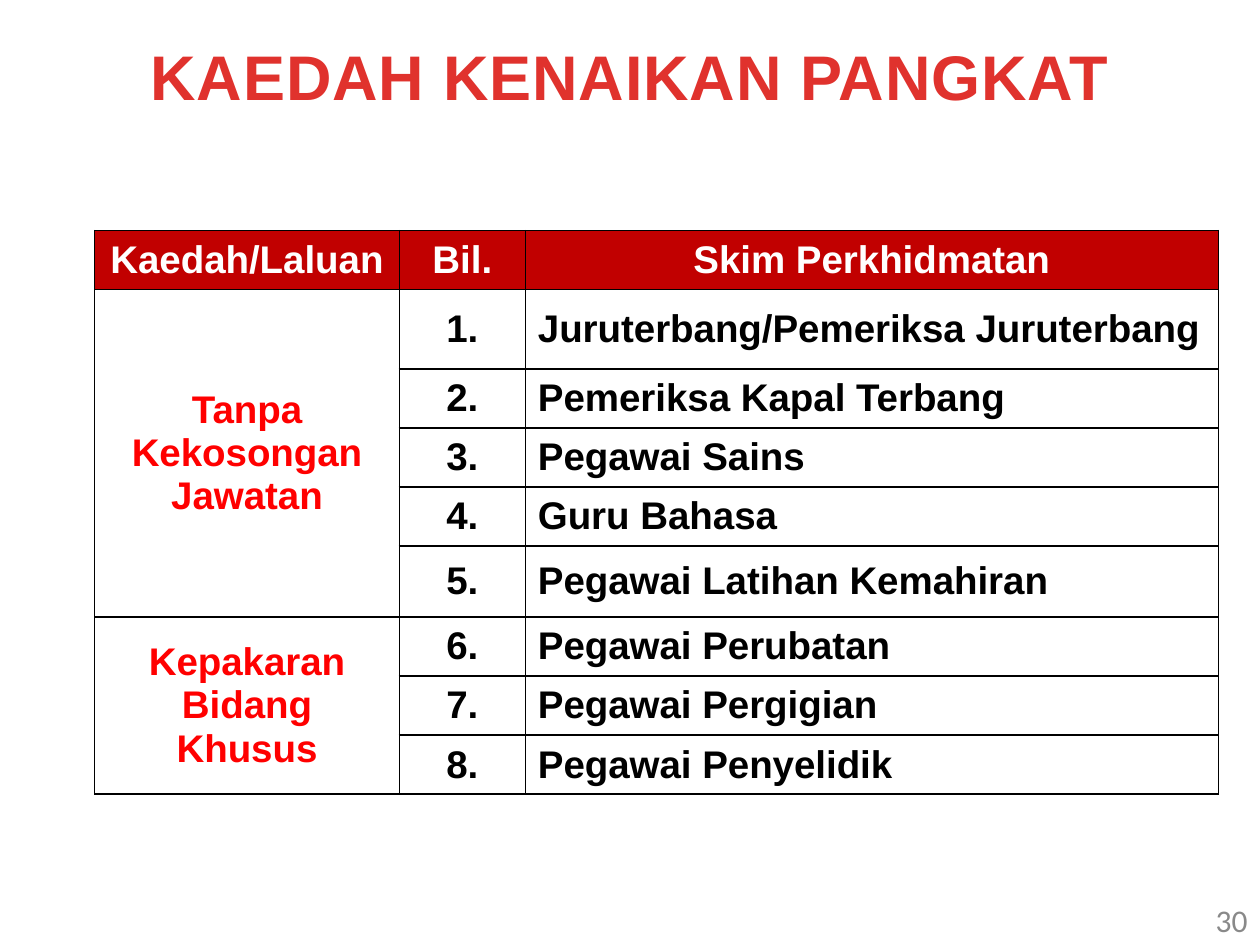
import pptx
import pptx.util
import pptx.dml.color
import pptx.enum.text
import pptx.oxml
from lxml import etree

Cm = pptx.util.Cm
Pt = pptx.util.Pt
RGBColor = pptx.dml.color.RGBColor
ALIGN = pptx.enum.text.PP_ALIGN
MIDDLE = pptx.enum.text.MSO_ANCHOR.MIDDLE

# Content
TITLE = "KAEDAH KENAIKAN PANGKAT"
PAGE_NUMBER = "30"
HEADINGS = ("Kaedah/Laluan", "Bil.", "Skim Perkhidmatan")
GROUPS = [
    ("Tanpa Kekosongan Jawatan", [
        "Juruterbang/Pemeriksa Juruterbang", "Pemeriksa Kapal Terbang",
        "Pegawai Sains", "Guru Bahasa", "Pegawai Latihan Kemahiran"]),
    ("Kepakaran Bidang Khusus", [
        "Pegawai Perubatan", "Pegawai Pergigian", "Pegawai Penyelidik"]),
]

# Layout in centimetres
COLUMN_WIDTHS = (6.14, 2.54, 13.97)
ROW_HEIGHT = 1.19
TALL_ROWS = {1: 1.6, 5: 1.43}

TITLE_RED = RGBColor(0xE0, 0x32, 0x2D)
HEADER_RED = RGBColor(0xC1, 0x00, 0x00)
GROUP_RED = RGBColor(0xFF, 0x00, 0x00)
WHITE = RGBColor(0xFF, 0xFF, 0xFF)
BLACK = RGBColor(0x00, 0x00, 0x00)
GREY = RGBColor(0x89, 0x89, 0x89)


def write(frame, text, size, color, align, name="Arial", bold=True):
    frame.word_wrap = True
    paragraph = frame.paragraphs[0]
    paragraph.text = text
    paragraph.alignment = align
    font = paragraph.font
    font.name, font.size, font.bold = name, Pt(size), bold
    font.color.rgb = color
    return paragraph


def add_text(slide, box, *style, **options):
    shape = slide.shapes.add_textbox(*map(Cm, box))
    return write(shape.text_frame, *style, **options)


def add_borders(cell):
    properties = cell._tc.get_or_add_tcPr()
    for position, side in enumerate(("lnL", "lnR", "lnT", "lnB")):
        line = etree.Element(pptx.oxml.ns.qn("a:" + side), w=str(Pt(1)))
        fill = etree.SubElement(line, pptx.oxml.ns.qn("a:solidFill"))
        etree.SubElement(fill, pptx.oxml.ns.qn("a:srgbClr"), val=str(BLACK))
        properties.insert(position, line)


def fill_cell(cell, text, color, align=ALIGN.CENTER):
    cell.vertical_anchor = MIDDLE
    write(cell.text_frame, text, 22, color, align)


def add_scheme_table(slide):
    row_count = 1 + sum(len(schemes) for _, schemes in GROUPS)
    heights = [TALL_ROWS.get(row, ROW_HEIGHT) for row in range(row_count)]
    table = slide.shapes.add_table(
        row_count, len(HEADINGS), Cm(1.91), Cm(4.65),
        Cm(sum(COLUMN_WIDTHS)), Cm(sum(heights))).table
    for column, width in zip(table.columns, COLUMN_WIDTHS):
        column.width = Cm(width)
    for row, height in zip(table.rows, heights):
        row.height = Cm(height)

    # Fills and borders
    for index, row in enumerate(table.rows):
        for cell in row.cells:
            cell.fill.solid()
            cell.fill.fore_color.rgb = WHITE if index else HEADER_RED
            add_borders(cell)

    # Text, with one merged label per group
    for column, heading in enumerate(HEADINGS):
        fill_cell(table.cell(0, column), heading, WHITE)
    number = 1
    for label, schemes in GROUPS:
        first = table.cell(number, 0)
        first.merge(table.cell(number + len(schemes) - 1, 0))
        fill_cell(first, label, GROUP_RED)
        for scheme in schemes:
            fill_cell(table.cell(number, 1), f"{number}.", BLACK)
            fill_cell(table.cell(number, 2), scheme, BLACK, ALIGN.LEFT)
            number += 1


def main():
    presentation = pptx.Presentation()
    presentation.slide_width, presentation.slide_height = Cm(25.4), Cm(19.05)
    slide = presentation.slides.add_slide(presentation.slide_layouts[6])

    add_scheme_table(slide)

    # Title with slightly open letter spacing
    title = add_text(slide, (0, 0.64, 25.4, 1.8), TITLE, 36, TITLE_RED, ALIGN.CENTER)
    title.runs[0].font._element.set("spc", "50")

    # Page number
    add_text(slide, (19.48, 18.03, 5.92, 1.02), PAGE_NUMBER, 18, GREY,
             ALIGN.RIGHT, name="Calibri", bold=False)

    presentation.save("out.pptx")


if __name__ == "__main__":
    main()
